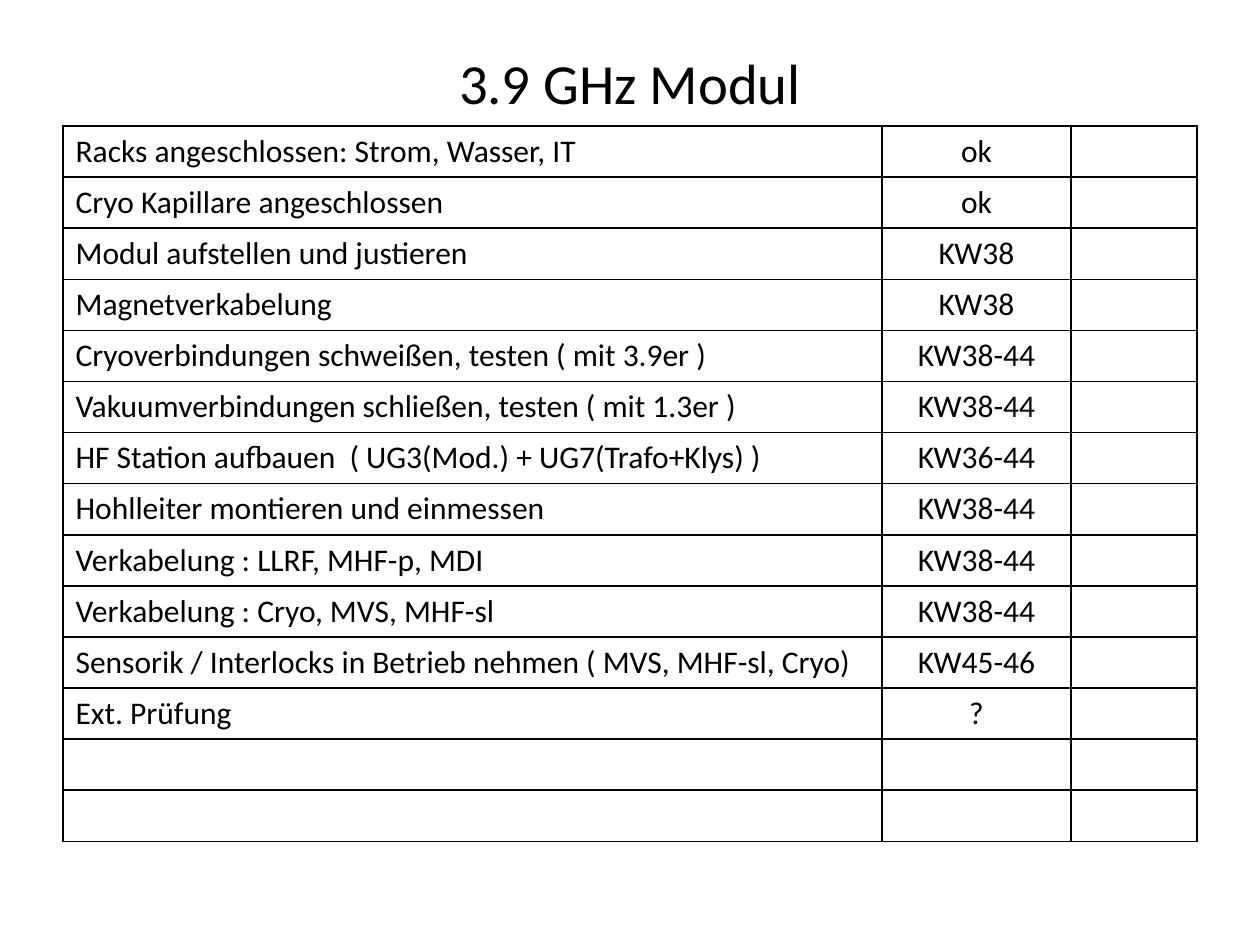
from lxml.etree import SubElement
from pptx import Presentation
from pptx.dml.color import RGBColor
from pptx.enum.text import MSO_ANCHOR, PP_ALIGN
from pptx.oxml.ns import qn
from pptx.util import Inches, Pt

BLACK = RGBColor(0, 0, 0)
WHITE = RGBColor(255, 255, 255)
TITLE = {"name": "Calibri", "size": Pt(32.4)}
BODY = {"name": "Calibri", "size": Pt(18)}
COLS = (6.5, 1.5, 1)
TASKS = [
    ("Racks angeschlossen: Strom, Wasser, IT", "ok"),
    ("Cryo Kapillare angeschlossen", "ok"),
    ("Modul aufstellen und justieren", "KW38"),
    ("Magnetverkabelung", "KW38"),
    ("Cryoverbindungen schweißen, testen ( mit 3.9er )", "KW38-44"),
    ("Vakuumverbindungen schließen, testen ( mit 1.3er )", "KW38-44"),
    ("HF Station aufbauen  ( UG3(Mod.) + UG7(Trafo+Klys) )", "KW36-44"),
    ("Hohlleiter montieren und einmessen", "KW38-44"),
    ("Verkabelung : LLRF, MHF-p, MDI", "KW38-44"),
    ("Verkabelung : Cryo, MVS, MHF-sl", "KW38-44"),
    ("Sensorik / Interlocks in Betrieb nehmen ( MVS, MHF-sl, Cryo)", "KW45-46"),
    ("Ext. Prüfung", "?"),
    ("", ""),
    ("", ""),
]


def write(frame, text, style, align):
    """Put one styled paragraph into a text frame."""
    para = frame.paragraphs[0]
    para.text = text
    para.alignment = align
    for key, value in style.items():
        setattr(para.font, key, value)
    para.font.color.rgb = BLACK


def add_title(slide, box, text):
    """Place the centred title in the box."""
    frame = slide.shapes.add_textbox(*box).text_frame
    frame.word_wrap = True
    frame.vertical_anchor = MSO_ANCHOR.MIDDLE
    write(frame, text, TITLE, PP_ALIGN.CENTER)


def add_border(cell):
    """Draw a thin black line on each side of a cell."""
    props = cell._tc.get_or_add_tcPr()
    for place, side in enumerate(("lnL", "lnR", "lnT", "lnB")):
        line = SubElement(props, qn(f"a:{side}"), w=str(Pt(1)))
        fill = SubElement(line, qn("a:solidFill"))
        SubElement(fill, qn("a:srgbClr"), val=str(BLACK))
        props.insert(place, line)


def add_plan(slide, box, tasks):
    """Place the task table in the box, with equal rows."""
    table = slide.shapes.add_table(len(tasks), len(COLS), *box).table
    table.first_row = table.horz_banding = False
    for col, width in zip(table.columns, COLS):
        col.width = Inches(width)
    for row, task in zip(table.rows, tasks):
        row.height = box[3] // len(tasks)
        for spot, (cell, text) in enumerate(zip(row.cells, (*task, ""))):
            cell.fill.solid()
            cell.fill.fore_color.rgb = WHITE
            align = PP_ALIGN.CENTER if spot else PP_ALIGN.LEFT
            write(cell.text_frame, text, BODY, align)
            add_border(cell)


def main():
    """Build and save the slide."""
    deck = Presentation()
    deck.slide_width, deck.slide_height = Inches(10), Inches(7.5)
    slide = deck.slides.add_slide(deck.slide_layouts[6])
    left, width = Inches(0.5), Inches(9)
    add_title(slide, (left, Inches(0.3), width, Inches(0.7)), "3.9 GHz Modul")
    add_plan(slide, (left, Inches(1), width, Inches(5.68)), TASKS)
    deck.save("out.pptx")


if __name__ == "__main__":
    main()
